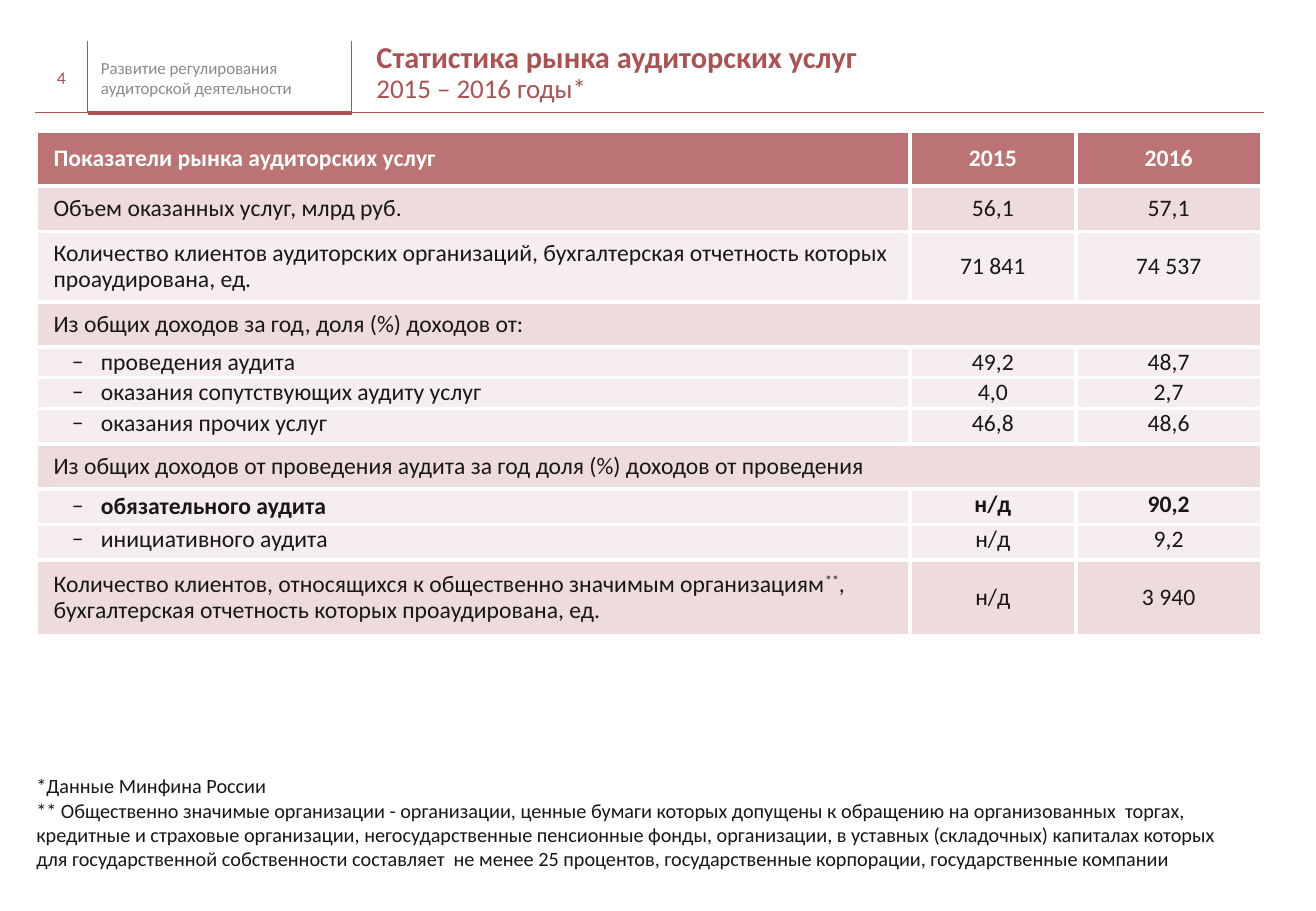
"""Build the audit market statistics slide."""
from dataclasses import dataclass

from lxml.etree import SubElement
from pptx import Presentation
from pptx.dml.color import RGBColor
from pptx.enum.shapes import MSO_CONNECTOR as Connector
from pptx.enum.text import MSO_ANCHOR as Anchor, MSO_AUTO_SIZE as AutoSize, PP_ALIGN as Align
from pptx.oxml import parse_xml
from pptx.oxml.ns import nsdecls, qn
from pptx.util import Cm, Pt

COLORS = {
    "accent": "AB5253",
    "muted": "8A8A8D",
    "ink": "181717",
    "white": "FFFFFF",
    "head": "BB7373",
    "band": "EEDCDC",
    "pale": "F6EEEE",
}
FONT = "Calibri"
COLUMN_WIDTHS = (18.26, 3.47, 3.88)


@dataclass(frozen=True)
class Rule:
    x1: float
    y1: float
    x2: float
    y2: float
    weight: float = 0.25


@dataclass(frozen=True)
class Row:
    label: str
    values: tuple[str, ...] = ()
    height: float = 0.94
    top: float = 0.2
    bottom: float = 0.2
    fill: str = "band"
    ink: str = "ink"
    bold: bool = False
    note: str = ""
    rest: str = ""


@dataclass(frozen=True)
class Item(Row):
    height: float = 0.64
    top: float = 0.05
    bottom: float = 0.05
    fill: str = "pale"
    label_bottom: float | None = None


RULES = (
    Rule(0.74, 2.34, 1.83, 2.34),
    Rule(1.83, 2.36, 7.36, 2.36, 2.25),
    Rule(7.32, 2.34, 26.42, 2.34),
    Rule(1.83, 0.86, 1.83, 2.36),
    Rule(7.34, 0.86, 7.34, 2.36),
)
ROWS = (
    Row("Показатели рынка аудиторских услуг", ("2015", "2016"), 1.12, 0.3, 0.3, "head", "white", True),
    Row("Объем оказанных услуг, млрд руб.", ("56,1", "57,1")),
    Row("Количество клиентов аудиторских организаций, бухгалтерская отчетность которых проаудирована, ед.",
        ("71 841", "74 537"), 1.47, fill="pale"),
    Row("Из общих доходов за год, доля (%) доходов от:"),
    Item("проведения аудита", ("49,2", "48,7")),
    Item("оказания сопутствующих аудиту услуг", ("4,0", "2,7")),
    Item("оказания прочих услуг", ("46,8", "48,6"), 0.74, bottom=0.15),
    Row("Из общих доходов от проведения аудита за год доля (%) доходов от проведения"),
    Item("обязательного аудита", ("н/д", "90,2"), 0.74, bottom=0.15, bold=True, label_bottom=0.05),
    Item("инициативного аудита", ("н/д", "9,2"), 0.74, bottom=0.15),
    Row("Количество клиентов, относящихся к общественно значимым организациям", ("н/д", "3 940"),
        1.55, 0.25, 0.25, note="**", rest=", бухгалтерская отчетность которых проаудирована, ед."),
)
FOOTNOTES = (
    "*Данные Минфина России",
    "** Общественно значимые организации - организации, ценные бумаги которых допущены к обращению "
    "на организованных  торгах, кредитные и страховые организации, негосударственные пенсионные фонды, "
    "организации, в уставных (складочных) капиталах которых для государственной собственности составляет  "
    "не менее 25 процентов, государственные корпорации, государственные компании",
)


def add_span(para, text: str, *, size: float = 14, color: str = "ink",
             bold: bool = False, raised: bool = False) -> None:
    """Append formatted text to a paragraph."""
    span = para.add_run()
    span.text = text
    span.font.name = FONT
    span.font.size = Pt(size)
    span.font.bold = bold
    span.font.color.rgb = RGBColor.from_string(COLORS[color])
    if raised:
        span.font._element.set("baseline", "30000")


def set_frame(frame, anchor: Anchor) -> None:
    """Give a text frame wrapping, no margins and an anchor."""
    frame.word_wrap = True
    frame.auto_size = AutoSize.NONE
    frame.vertical_anchor = anchor
    frame.margin_left = frame.margin_right = frame.margin_top = frame.margin_bottom = 0


def add_box(page, place: tuple[float, ...], texts: tuple[str, ...], *, size: float, color: str,
            align: Align = Align.LEFT, anchor: Anchor = Anchor.MIDDLE) -> None:
    """Add a text box with one paragraph per text."""
    frame = page.shapes.add_textbox(*map(Cm, place)).text_frame
    set_frame(frame, anchor)
    for index, text in enumerate(texts):
        para = frame.add_paragraph() if index else frame.paragraphs[0]
        para.alignment = align
        add_span(para, text, size=size, color=color)


def add_rule(page, rule: Rule) -> None:
    """Draw one header line."""
    line = page.shapes.add_connector(Connector.STRAIGHT, *map(Cm, (rule.x1, rule.y1, rule.x2, rule.y2)))
    line.line.color.rgb = RGBColor.from_string(COLORS["accent"])
    line.line.width = Pt(rule.weight)
    SubElement(line._element.spPr, qn("a:effectLst"))


def add_title(page) -> None:
    """Place and fill the title placeholder."""
    title = page.shapes.title
    title.left, title.top, title.width, title.height = map(Cm, (7.87, 0.56, 14.02, 1.93))
    set_frame(title.text_frame, Anchor.MIDDLE)
    para = title.text_frame.paragraphs[0]
    para.alignment = Align.LEFT
    para.line_spacing = 0.9
    add_span(para, "Статистика рынка аудиторских услуг", size=18, color="accent", bold=True)
    para.add_line_break()
    add_span(para, "2015 – 2016 годы*", size=16, color="accent")


def style_cell(cell, row: Row, bottom: float) -> None:
    """Set the fill, margins and white borders of a cell."""
    cell.fill.solid()
    cell.fill.fore_color.rgb = RGBColor.from_string(COLORS[row.fill])
    cell.vertical_anchor = Anchor.MIDDLE
    cell.margin_left = cell.margin_right = Cm(0.36)
    cell.margin_top, cell.margin_bottom = Cm(row.top), Cm(bottom)
    properties = cell._tc.get_or_add_tcPr()
    for index, side in enumerate(("lnL", "lnR", "lnT", "lnB")):
        properties.insert(index, parse_xml(
            f'<a:{side} {nsdecls("a")} w="{Pt(2.25)}"><a:solidFill>'
            f'<a:srgbClr val="{COLORS["white"]}"/></a:solidFill></a:{side}>'))


def add_dash(para) -> None:
    """Make a paragraph a dashed second-level item."""
    para.level = 1
    properties = para._p.get_or_add_pPr()
    properties.set("marL", str(Cm(0.99)))
    properties.set("indent", str(-Cm(0.61)))
    SubElement(properties, qn("a:buFont"), typeface=FONT)
    SubElement(properties, qn("a:buChar"), char="–")


def fill_row(table, index: int, row: Row) -> None:
    """Write one table row."""
    table.rows[index].height = Cm(row.height)
    for column, text in enumerate((row.label, *(row.values or ("", "")))):
        cell = table.cell(index, column)
        bottom = row.bottom
        if isinstance(row, Item) and column == 0 and row.label_bottom is not None:
            bottom = row.label_bottom
        style_cell(cell, row, bottom)
        if not text:
            continue
        para = cell.text_frame.paragraphs[0]
        para.line_spacing = 0.9
        para.alignment = Align.CENTER if column else Align.LEFT
        if isinstance(row, Item) and column == 0:
            add_dash(para)
        add_span(para, text, color=row.ink, bold=row.bold)
        if row.note and column == 0:
            add_span(para, row.note, raised=True)
            add_span(para, row.rest)
    if not row.values:
        table.cell(index, 0).merge(table.cell(index, 2))


def add_statistics(page) -> None:
    """Add the market table."""
    place = (0.76, 2.75, sum(COLUMN_WIDTHS), sum(row.height for row in ROWS))
    table = page.shapes.add_table(len(ROWS), len(COLUMN_WIDTHS), *map(Cm, place)).table
    table.horz_banding = False
    for column, width in zip(table.columns, COLUMN_WIDTHS):
        column.width = Cm(width)
    for index, row in enumerate(ROWS):
        fill_row(table, index, row)


def main() -> None:
    """Build and save the deck."""
    deck = Presentation()
    deck.slide_width, deck.slide_height = Cm(27.51), Cm(19.05)
    page = deck.slides.add_slide(deck.slide_layouts[5])
    for rule in RULES:
        add_rule(page, rule)
    add_box(page, (0.74, 1.12, 1.09, 1.02), ("4",), size=10.5, color="accent", align=Align.CENTER)
    add_box(page, (2.11, 1.19, 5.16, 0.86), ("Развитие регулирования аудиторской деятельности",),
            size=10, color="muted")
    add_statistics(page)
    add_box(page, (0.76, 16.18, 25.27, 2.49), FOOTNOTES, size=12, color="ink", anchor=Anchor.TOP)
    add_title(page)
    deck.save("out.pptx")


if __name__ == "__main__":
    main()
